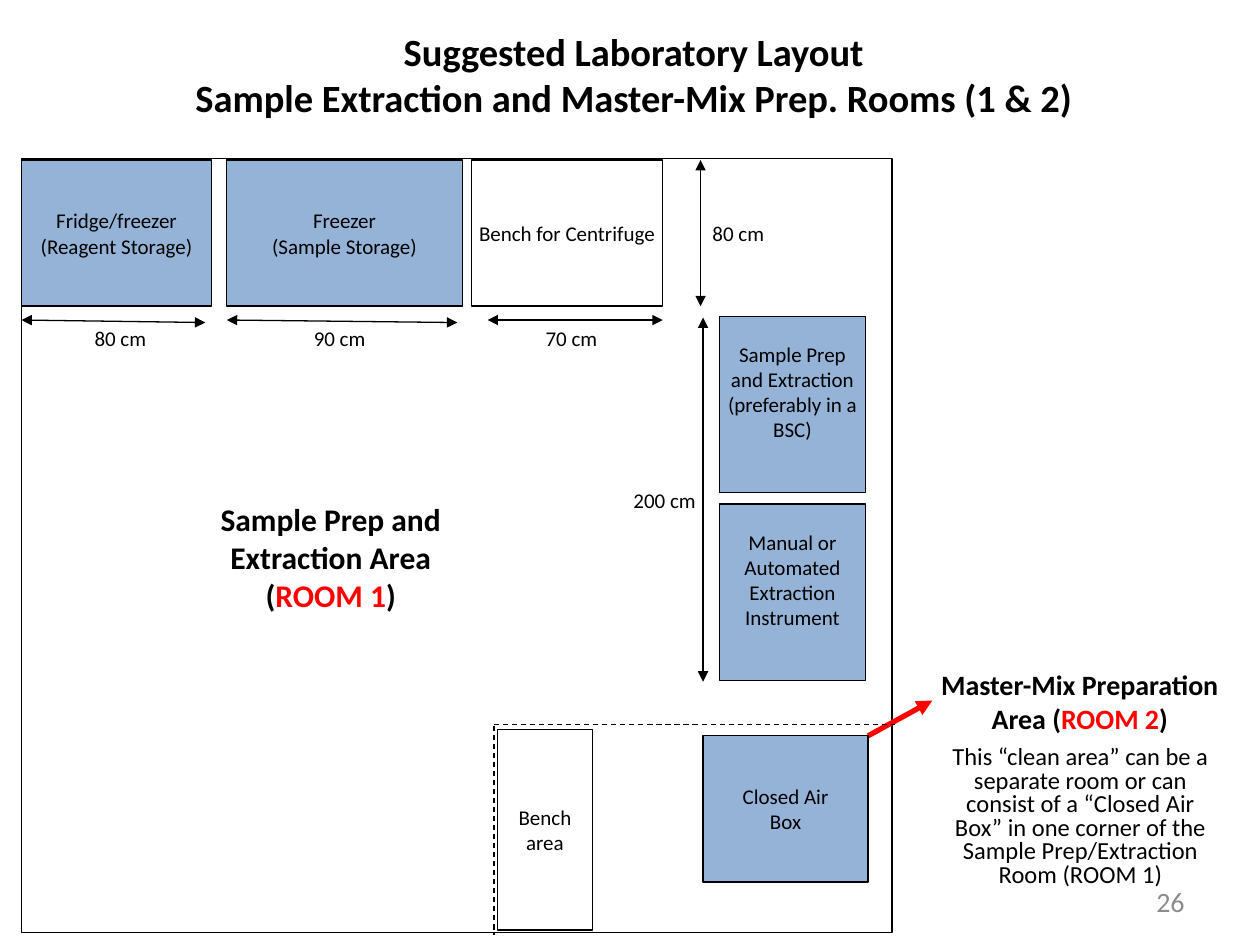
import pptx
import pptx.dml.color
import pptx.enum.dml
import pptx.enum.shapes
import pptx.enum.text
import pptx.oxml.ns
import pptx.util
import lxml.etree
from dataclasses import dataclass

Inches = pptx.util.Inches
Align = pptx.enum.text.PP_ALIGN
Anchor = pptx.enum.text.MSO_ANCHOR

COLORS = {
    "black": "000000",
    "white": "FFFFFF",
    "blue": "4F81BD",
    "red": "FF0000",
    "gray": "8C8C8C",
}
NO_INSETS = (0, 0, 0, 0)
TEXT_INSETS = (0.1, 0.05, 0.1, 0.05)
INSTRUMENT_INSETS = (0.05, 0, 0.05, 0.2)


@dataclass
class Equipment:
    lines: list
    left: float
    top: float
    width: float
    height: float
    fill: str = "blue"
    insets: tuple = NO_INSETS


@dataclass
class Line:
    start: tuple
    end: tuple
    color: str = "black"
    width: float = 0.75
    head: bool = False
    tail: bool = False
    dashed: bool = False


@dataclass
class Label:
    lines: list
    left: float
    top: float
    width: float
    height: float
    style: dict


def color(name: str):
    return pptx.dml.color.RGBColor.from_string(COLORS[name])


def add_element(parent, tag: str, **attributes: str) -> None:
    lxml.etree.SubElement(parent, pptx.oxml.ns.qn(tag), attributes)


def write_text(shape, lines: list, *, size=12, bold=False, ink="black", align=Align.CENTER,
               anchor=Anchor.MIDDLE, insets=NO_INSETS, wrap=True, spacing=None, before=None) -> None:
    frame = shape.text_frame
    frame.word_wrap = wrap
    frame.vertical_anchor = anchor
    frame.margin_left, frame.margin_top, frame.margin_right, frame.margin_bottom = map(Inches, insets)
    for index, line in enumerate(lines):
        para = frame.add_paragraph() if index else frame.paragraphs[0]
        para.alignment = align
        if spacing is not None:
            para.line_spacing = spacing
        if before is not None:
            para.space_before = pptx.util.Pt(before)
        for text, span_ink in [(line, ink)] if isinstance(line, str) else line:
            for part_index, part in enumerate(text.split("\n")):
                if part_index:
                    para.add_line_break()
                span = para.add_run()
                span.text = part
                span.font.name = "Calibri"
                span.font.size = pptx.util.Pt(size)
                span.font.bold = bold
                span.font.color.rgb = color(span_ink)


def add_box(page, left: float, top: float, width: float, height: float,
            fill: str = "", opacity: int = 100, outlined: bool = True):
    box = page.shapes.add_shape(pptx.enum.shapes.MSO_SHAPE.RECTANGLE,
                                *map(Inches, (left, top, width, height)))
    box.shadow.inherit = False
    if fill:
        box.fill.solid()
        box.fill.fore_color.rgb = color(fill)
        if opacity < 100:
            swatch = box._element.spPr.find(".//" + pptx.oxml.ns.qn("a:srgbClr"))
            add_element(swatch, "a:alpha", val=str(opacity * 1000))
    else:
        box.fill.background()
    if outlined:
        box.line.color.rgb = color("black")
        box.line.width = pptx.util.Pt(0.75)
    else:
        box.line.fill.background()
    return box


def add_equipment(page, item: Equipment) -> None:
    box = add_box(page, item.left, item.top, item.width, item.height, item.fill, 60)
    write_text(box, item.lines, insets=item.insets)


def add_line(page, line: Line) -> None:
    connector = page.shapes.add_connector(pptx.enum.shapes.MSO_CONNECTOR.STRAIGHT,
                                          *map(Inches, line.start + line.end))
    connector.line.color.rgb = color(line.color)
    connector.line.width = pptx.util.Pt(line.width)
    if line.dashed:
        connector.line.dash_style = pptx.enum.dml.MSO_LINE.DASH
    properties = connector._element.spPr
    outline = properties.find(pptx.oxml.ns.qn("a:ln"))
    for tag, wanted in (("a:headEnd", line.head), ("a:tailEnd", line.tail)):
        if wanted:
            add_element(outline, tag, type="triangle")
    add_element(properties, "a:effectLst")


def add_dimension(page, start: tuple, end: tuple) -> None:
    add_line(page, Line(start, end, head=True, tail=True))


def add_label(page, label: Label) -> None:
    box = page.shapes.add_textbox(*map(Inches, (label.left, label.top, label.width, label.height)))
    write_text(box, label.lines, **label.style)


EQUIPMENT = [
    Equipment(["Fridge/freezer", "(Reagent Storage)"], 0.17, 1.27, 1.51, 1.16),
    Equipment(["Freezer", "(Sample Storage)"], 1.8, 1.27, 1.87, 1.16),
    Equipment(["Bench for Centrifuge"], 3.74, 1.27, 1.52, 1.16, "white"),
    Equipment(["Sample Prep and Extraction", "(preferably in a BSC)"],
              5.71, 2.51, 1.16, 1.4, insets=INSTRUMENT_INSETS),
    Equipment(["Manual or Automated Extraction Instrument"],
              5.71, 4, 1.16, 1.4, insets=INSTRUMENT_INSETS),
    Equipment(["Closed Air", "Box"], 5.58, 5.84, 1.31, 1.16),
    Equipment(["Bench area"], 3.95, 5.79, 0.75, 1.59, "white"),
]

DIMENSIONS = [
    ((0.17, 2.54), (1.63, 2.56)),
    ((1.8, 2.54), (3.63, 2.56)),
    ((3.87, 2.54), (5.26, 2.54)),
    ((5.56, 1.27), (5.56, 2.43)),
    ((5.58, 2.52), (5.58, 5.41)),
]

LINES = [
    Line((6.89, 5.84), (7.4, 5.56), color="red", width=3, tail=True),
    Line((3.92, 5.75), (7.1, 5.75), dashed=True),
    Line((3.92, 5.76), (3.92, 7.42), dashed=True),
]

LABELS = [
    Label(["80 cm"], 0.61, 2.5, 0.69, 0.36, {"wrap": False}),
    Label(["90 cm"], 2.35, 2.5, 0.69, 0.36, {"wrap": False}),
    Label(["70 cm"], 4.19, 2.5, 0.69, 0.36, {"wrap": False}),
    Label(["80 cm"], 5.39, 1.62, 0.94, 0.46, {}),
    Label(["200 cm"], 4.92, 3.82, 0.71, 0.29,
          {"wrap": False, "anchor": Anchor.TOP, "insets": TEXT_INSETS}),
    Label([[("Master-Mix Preparation Area (", "black"), ("ROOM 2", "red"), (")", "black")]],
          7.17, 5.25, 2.8, 0.69,
          {"size": 16, "bold": True, "anchor": Anchor.TOP, "insets": TEXT_INSETS}),
    Label(["This “clean area” can be a separate room or can consist of a “Closed Air Box” "
           "in one corner of the Sample Prep/Extraction Room (ROOM 1)"],
          7.4, 5.88, 2.35, 1.15,
          {"size": 14, "anchor": Anchor.TOP, "insets": TEXT_INSETS, "spacing": 0.8, "before": 2.8}),
    Label(["26"], 7.17, 6.95, 2.33, 0.4,
          {"size": 16, "ink": "gray", "align": Align.RIGHT, "insets": TEXT_INSETS}),
]


def main() -> None:
    deck = pptx.Presentation()
    deck.slide_width, deck.slide_height = Inches(10), Inches(7.5)
    page = deck.slides.add_slide(deck.slide_layouts[5])
    title = page.shapes.title
    title.left, title.top, title.width, title.height = map(Inches, (0.57, 0.05, 8.92, 1.08))
    write_text(title, ["Suggested Laboratory Layout\nSample Extraction and Master-Mix Prep. Rooms (1 & 2)"],
               size=22, bold=True, insets=TEXT_INSETS)
    add_box(page, 0.17, 1.26, 6.91, 6.14)
    room = add_box(page, 1.17, 3.92, 2.91, 0.6, "white", outlined=False)
    write_text(room, ["Sample Prep and Extraction Area", [("(", "black"), ("ROOM 1", "red"), (")", "black")]],
               size=18, bold=True, anchor=Anchor.TOP, insets=TEXT_INSETS)
    for line in LINES:
        add_line(page, line)
    for item in EQUIPMENT:
        add_equipment(page, item)
    for start, end in DIMENSIONS:
        add_dimension(page, start, end)
    for label in LABELS:
        add_label(page, label)
    deck.save("out.pptx")


if __name__ == "__main__":
    main()
